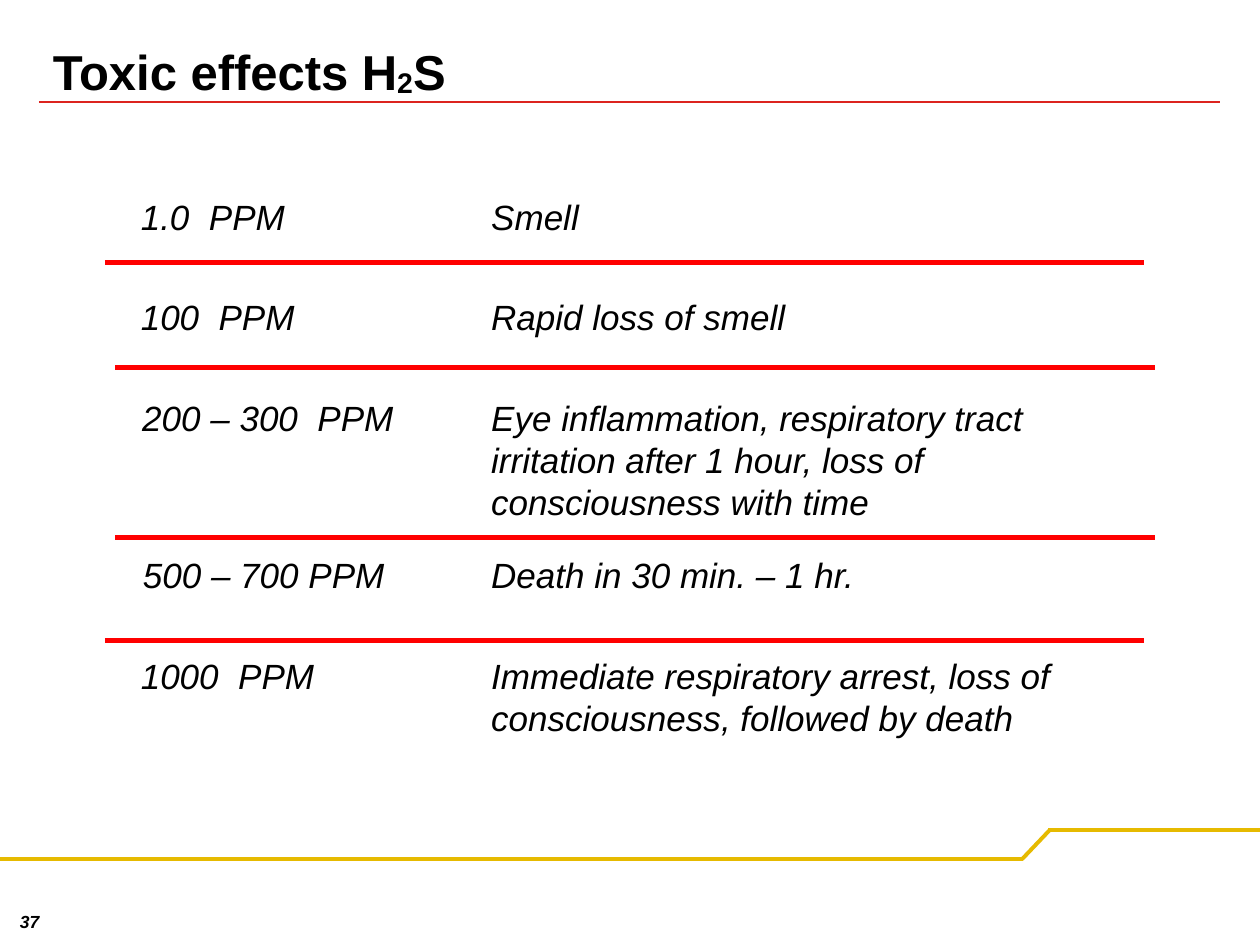
"""Build the slide on the toxic effects of hydrogen sulphide."""
from dataclasses import dataclass

from lxml import etree
from pptx import Presentation
from pptx.dml.color import RGBColor
from pptx.enum.shapes import MSO_CONNECTOR
from pptx.enum.text import MSO_ANCHOR, MSO_AUTO_SIZE, PP_ALIGN
from pptx.oxml.ns import qn
from pptx.util import Pt

STRAIGHT = MSO_CONNECTOR.STRAIGHT
TOP = MSO_ANCHOR.TOP
NO_FIT = MSO_AUTO_SIZE.NONE
LEFT, CENTER = PP_ALIGN.LEFT, PP_ALIGN.CENTER

COLORS = {"ink": "000000", "title_rule": "DC241F", "footer": "E6BA00", "row_rule": "FF0000"}
TITLE_FORMAT = {"name": "Arial", "size": Pt(28), "bold": True, "italic": False}
BODY_FORMAT = {"name": "Arial", "size": Pt(20), "bold": False, "italic": True}
NUMBER_FORMAT = {"name": "Arial", "size": Pt(10), "bold": True, "italic": True}

ROWS_TOP = 108
EFFECT_LEFT, EFFECT_WIDTH = 273.6, 385.2
ROW_RULE_LENGTH = 594


@dataclass
class Exposure:
    """One concentration and its effect."""
    level: str
    effect: str
    left: float
    width: float
    height: float


@dataclass
class Rule:
    """One straight line."""
    x1: float
    y1: float
    x2: float
    y2: float
    color: str
    weight: float


EXPOSURES = [
    Exposure("1.0  PPM", "Smell", 73.4, 149, 57.4),
    Exposure("100  PPM", "Rapid loss of smell", 73.4, 149, 57.4),
    Exposure("200 – 300  PPM", "Eye inflammation, respiratory tract irritation after 1 hour, "
             "loss of consciousness with time", 74.2, 163.4, 90),
    Exposure("500 – 700 PPM", "Death in 30 min. – 1 hr.", 74.6, 168.5, 57.4),
    Exposure("1000  PPM", "Immediate respiratory arrest, loss of consciousness, "
             "followed by death", 73.4, 149, 73.4),
]
FRAME_RULES = [
    Rule(22.3, 58.1, 697, 58.1, "title_rule", 1),
    Rule(0, 491, 584.4, 491, "footer", 2.25),
    Rule(599, 474.4, 720, 474.4, "footer", 2.25),
    Rule(584, 491, 599.8, 474.4, "footer", 2.25),
]
ROW_RULES = [
    Rule(x, y, x + ROW_RULE_LENGTH, y, "row_rule", 3)
    for x, y in [(60, 150), (66, 210), (66, 307.2), (60, 366)]
]


def format_span(span, values: dict) -> None:
    """Apply font values and the ink colour to a run."""
    for name, value in values.items():
        setattr(span.font, name, value)
    span.font.color.rgb = RGBColor.from_string(COLORS["ink"])


def draw_rule(page, rule: Rule) -> None:
    """Draw a straight line without a shadow."""
    ends = [Pt(value) for value in (rule.x1, rule.y1, rule.x2, rule.y2)]
    connector = page.shapes.add_connector(STRAIGHT, *ends)
    connector.line.color.rgb = RGBColor.from_string(COLORS[rule.color])
    connector.line.width = Pt(rule.weight)
    etree.SubElement(connector._element.spPr, qn("a:effectLst"))


def draw_text(page, text: str, frame: tuple, values: dict, wrap: bool = True,
              align=LEFT, spacing: float = 1.0) -> None:
    """Draw a text box holding one paragraph."""
    box = page.shapes.add_textbox(*[Pt(value) for value in frame])
    box.text_frame.word_wrap = wrap
    para = box.text_frame.paragraphs[0]
    para.alignment = align
    para.line_spacing = spacing
    span = para.add_run()
    span.text = text
    format_span(span, values)


def fill_title(title) -> None:
    """Place the title and write its formula with a subscript."""
    title.left, title.top, title.width, title.height = Pt(23), Pt(17.3), Pt(630), Pt(36.7)
    frame = title.text_frame
    settings = {"vertical_anchor": TOP, "auto_size": NO_FIT, "word_wrap": True,
                "margin_top": Pt(6.5), "margin_bottom": Pt(0)}
    for name, value in settings.items():
        setattr(frame, name, value)
    para = frame.paragraphs[0]
    para.alignment = LEFT
    for text, baseline in [("Toxic effects H", 0), ("2", -6000), ("S", 0)]:
        span = para.add_run()
        span.text = text
        format_span(span, TITLE_FORMAT)
        if baseline:
            span._r.get_or_add_rPr().set("baseline", str(baseline))


def main() -> None:
    """Build and save the deck."""
    deck = Presentation()
    deck.slide_width, deck.slide_height = Pt(720), Pt(540)
    page = deck.slides.add_slide(deck.slide_layouts[5])
    fill_title(page.shapes.title)
    draw_text(page, "37", (3.6, 518.4, 26.6, 18), NUMBER_FORMAT, False, CENTER, 0.9)
    for rule in FRAME_RULES:
        draw_rule(page, rule)
    top = ROWS_TOP
    for row in EXPOSURES:
        draw_text(page, row.level, (row.left, top, row.width, row.height), BODY_FORMAT)
        draw_text(page, row.effect, (EFFECT_LEFT, top, EFFECT_WIDTH, row.height), BODY_FORMAT)
        top += row.height
    for rule in ROW_RULES:
        draw_rule(page, rule)
    deck.save("out.pptx")


if __name__ == "__main__":
    main()
